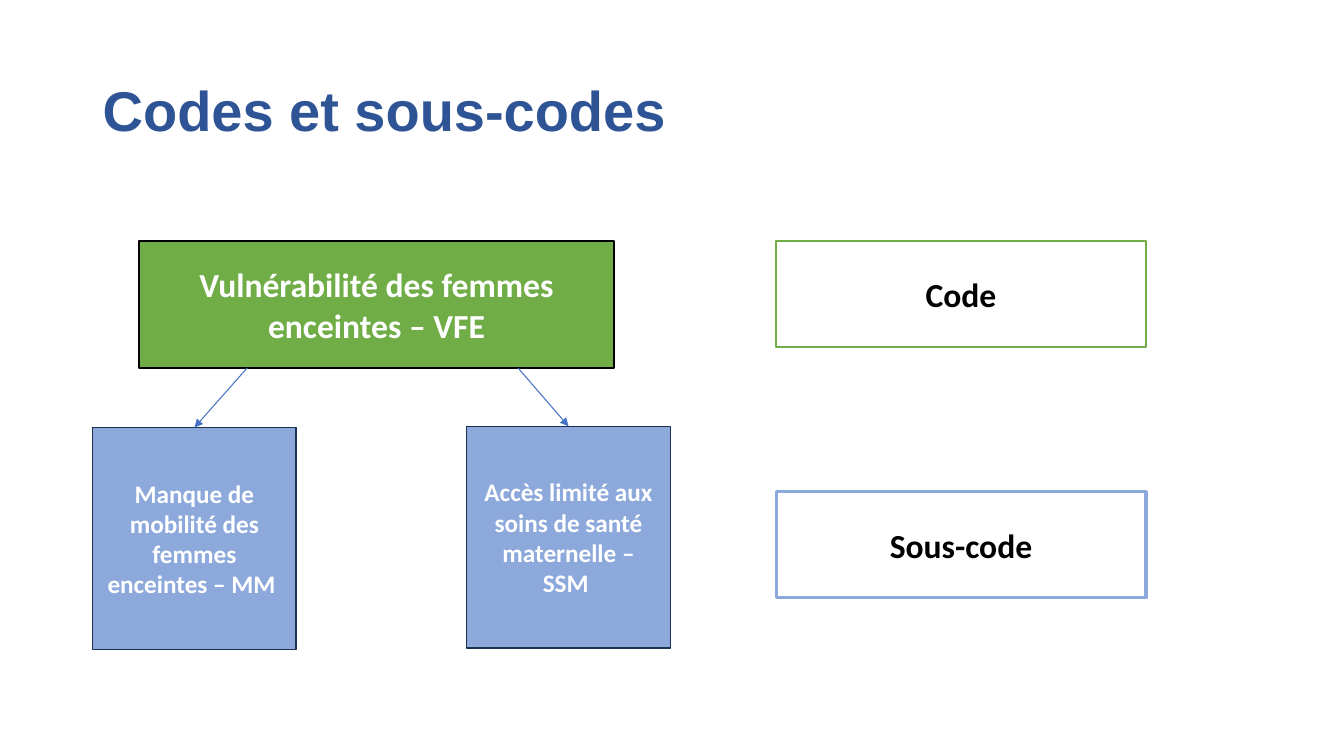
from lxml import etree
from pptx import Presentation
from pptx.dml.color import RGBColor
from pptx.enum.shapes import MSO_CONNECTOR, MSO_SHAPE
from pptx.enum.text import MSO_ANCHOR, PP_ALIGN
from pptx.oxml.ns import qn
from pptx.util import Pt

RECTANGLE = MSO_SHAPE.RECTANGLE
STRAIGHT = MSO_CONNECTOR.STRAIGHT
MIDDLE = MSO_ANCHOR.MIDDLE
CENTER = PP_ALIGN.CENTER
TOP_SIDE = 0

GREEN, BLUE, NAVY, WHITE, BLACK = "70AD47", "8DA9DB", "1C3052", "FFFFFF", "000000"
TITLE = "Codes et sous-codes"
CODE = ("Vulnérabilité des femmes enceintes – VFE", 99.4, 172.2, 339.2, 90.6)
SUBCODES = [
    ("Manque de mobilité des femmes enceintes – MM ", 66.2, 305.4, 176.6),
    ("Accès limité aux soins de santé maternelle – SSM ", 333.4, 304.5, 370),
]
SUBCODE_SIZE = (145.4, 158.4)
LEGEND = [("Code", 172, GREEN, 1.5), ("Sous-code", 351.2, BLUE, 2.25)]
LEGEND_LEFT, LEGEND_WIDTH, LEGEND_HEIGHT = 554.4, 264.2, 75.8


def color(value):
    return RGBColor.from_string(value)


def format_text(paragraph, font_name, size, font_color):
    for run in paragraph.runs:
        run.font.name = font_name
        run.font.size = Pt(size)
        run.font.bold = True
        run.font.color.rgb = color(font_color)


def add_box(slide, text, bounds, fill, line_color, line_width, size, font_color):
    shape = slide.shapes.add_shape(RECTANGLE, *map(Pt, bounds))
    shape.shadow.inherit = False
    if fill:
        shape.fill.solid()
        shape.fill.fore_color.rgb = color(fill)
    else:
        shape.fill.background()
    shape.line.color.rgb = color(line_color)
    shape.line.width = Pt(line_width)
    frame = shape.text_frame
    frame.word_wrap = True
    frame.vertical_anchor = MIDDLE
    frame.text = text
    paragraph = frame.paragraphs[0]
    paragraph.alignment = CENTER
    format_text(paragraph, "Calibri", size, font_color)
    return shape


def add_arrow(slide, start_x, start_y, target):
    arrow = slide.shapes.add_connector(
        STRAIGHT, Pt(start_x), Pt(start_y), target.left, target.top)
    arrow.end_connect(target, TOP_SIDE)
    arrow.line.color.rgb = color("4472C4")
    arrow.line.width = Pt(0.75)
    etree.SubElement(arrow.line._get_or_add_ln(), qn("a:tailEnd"), type="triangle")
    etree.SubElement(arrow._element.spPr, qn("a:effectLst"))


def add_title(slide):
    title = slide.shapes.title
    title.left, title.top, title.width, title.height = map(Pt, (66.2, 28.8, 828, 104.4))
    title.text_frame.text = TITLE
    title.text_frame.vertical_anchor = MIDDLE
    paragraph = title.text_frame.paragraphs[0]
    paragraph.alignment = PP_ALIGN.LEFT
    paragraph.line_spacing = 0.9
    format_text(paragraph, "Arial", 40, "2F5496")


def main():
    presentation = Presentation()
    presentation.slide_width, presentation.slide_height = Pt(960), Pt(540)
    slide = presentation.slides.add_slide(presentation.slide_layouts[5])
    add_title(slide)

    text, *bounds = CODE
    add_box(slide, text, bounds, GREEN, BLACK, 1, 24, WHITE)
    code_bottom = bounds[1] + bounds[3]
    for text, left, top, arrow_x in SUBCODES:
        box = add_box(slide, text, (left, top, *SUBCODE_SIZE), BLUE, NAVY, 1, 18, WHITE)
        add_arrow(slide, arrow_x, code_bottom, box)
    for text, top, line_color, line_width in LEGEND:
        bounds = (LEGEND_LEFT, top, LEGEND_WIDTH, LEGEND_HEIGHT)
        add_box(slide, text, bounds, None, line_color, line_width, 24, BLACK)

    presentation.save("out.pptx")


if __name__ == "__main__":
    main()
